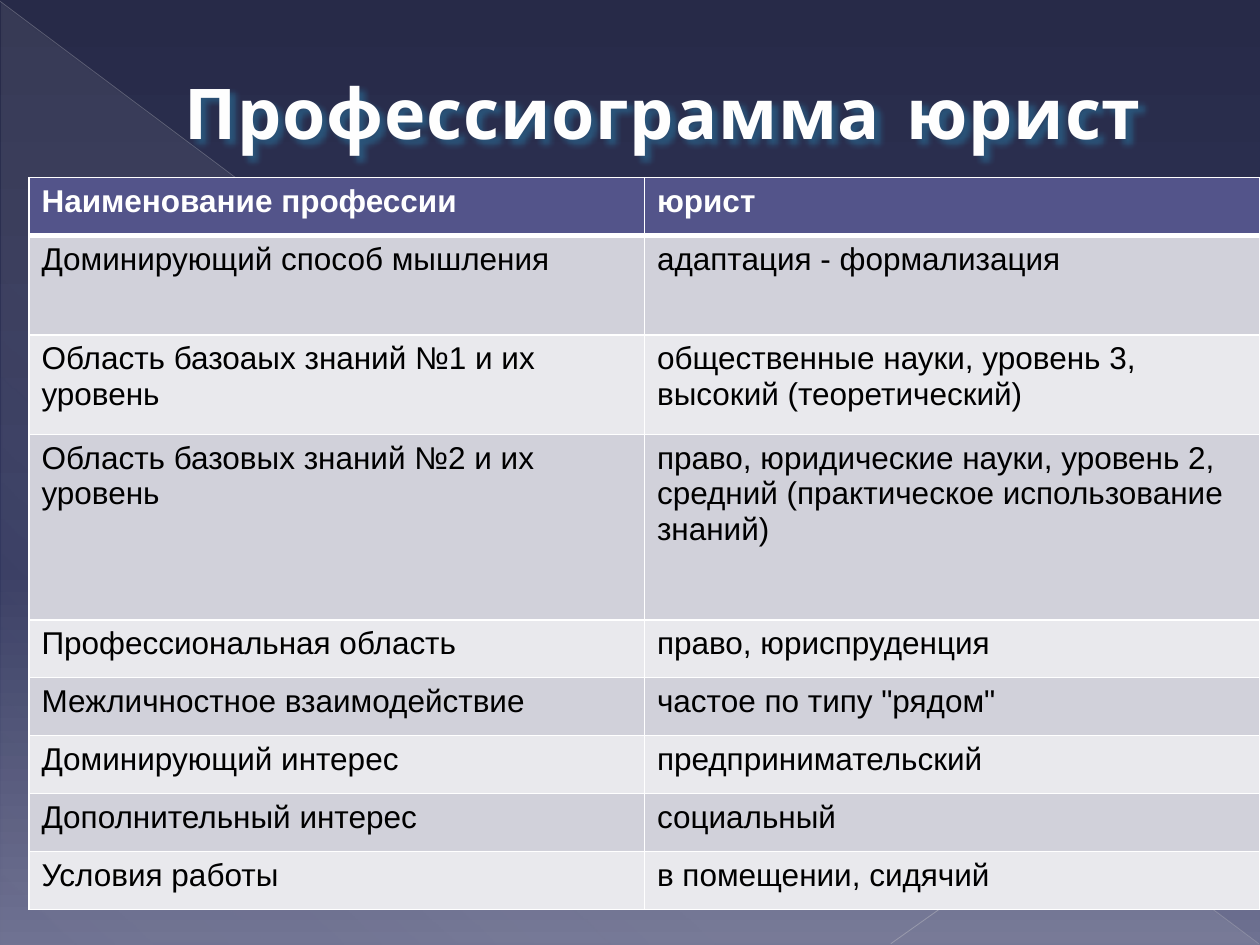
import pptx
import pptx.dml.color
import pptx.enum.shapes
import pptx.enum.text
import pptx.oxml
import pptx.oxml.ns
import pptx.util
from lxml import etree

Inches, Pt, qn = pptx.util.Inches, pptx.util.Pt, pptx.oxml.ns.qn

HEADER = ("Наименование профессии", "юрист")
TRAITS = [
    ("Доминирующий способ мышления", "адаптация - формализация"),
    ("Область базоаых знаний №1 и их уровень",
     "общественные науки, уровень 3, высокий (теоретический)"),
    ("Область базовых знаний №2 и их уровень",
     "право, юридические науки, уровень 2, средний (практическое использование знаний)"),
    ("Профессиональная область", "право, юриспруденция"),
    ("Межличностное взаимодействие", 'частое по типу "рядом"'),
    ("Доминирующий интерес", "предпринимательский"),
    ("Дополнительный интерес", "социальный"),
    ("Условия работы", "в помещении, сидячий"),
]
LOW_ROW = 0.46
TALL_ROWS = {1: 0.79, 2: 0.79, 3: 1.47}
BANDS = ("E9E9ED", "D1D1DA")
TITLE_FONT = {"name": "Comic Neue", "size": Pt(40), "bold": True}
HEADER_FONT = {"name": "Arial", "size": Pt(18), "bold": True}
TRAIT_FONT = {**HEADER_FONT, "bold": False}


def add_color(parent, color, alpha=100):
    """Append a colour with its opacity in percent to an XML parent."""
    tone = etree.SubElement(parent, qn("a:srgbClr"), val=color)
    if alpha < 100:
        etree.SubElement(tone, qn("a:alpha"), val=str(alpha * 1000))


def add_solid(parent, color, alpha=100):
    """Append a solid fill to an XML parent."""
    add_color(etree.SubElement(parent, qn("a:solidFill")), color, alpha)


def apply_format(target, values):
    """Set each attribute named in the format values."""
    for name, value in values.items():
        setattr(target, name, value)


def fill_gradient(fill, owner, stops, angle):
    """Give the owner's fill a linear gradient with a clockwise angle."""
    fill.gradient()
    fill.gradient_angle = 360 - angle
    stop_list = owner.find(".//" + qn("a:gsLst"))
    for stop in list(stop_list):
        stop_list.remove(stop)
    for position, color, alpha in stops:
        stop = etree.SubElement(stop_list, qn("a:gs"), pos=str(position * 1000))
        add_color(stop, color, alpha)


def write_run(frame, text, font, color):
    """Write one formatted run into a text frame and return it."""
    run = frame.paragraphs[0].add_run()
    run.text = text
    apply_format(run.font, font)
    run.font.color.rgb = pptx.dml.color.RGBColor.from_string(color)
    return run


def add_ray(slide, start, end, color, width, alpha):
    """Draw a thin translucent line."""
    ray = slide.shapes.add_connector(
        pptx.enum.shapes.MSO_CONNECTOR.STRAIGHT,
        *(Inches(value) for value in (*start, *end)))
    ray.line.width = Pt(width)
    add_solid(ray.line._get_or_add_ln(), color, alpha)
    etree.SubElement(ray._element.spPr, qn("a:effectLst"))


def add_backdrop(slide, width, height):
    """Paint the background, the pale wedge and the two rays."""
    fill_gradient(slide.background.fill, slide._element,
                  [(0, "272A48", 100), (60, "33385F", 100), (100, "6E7191", 100)], 90)
    wedge = slide.shapes.add_shape(
        pptx.enum.shapes.MSO_SHAPE.RIGHT_TRIANGLE,
        Inches(0.01), Inches(0.02), Inches(width - 0.01), Inches(height - 0.02))
    wedge.shadow.inherit = False
    wedge.line.fill.background()
    fill_gradient(wedge.fill, wedge._element,
                  [(0, "DEDEDE", 10), (70, "DEDEDE", 8), (100, "DEDEDE", 1)], 133)
    add_ray(slide, (0, 0.01), (width - 0.01, height - 0.01), "B7B7BE", 0.39, 35)
    add_ray(slide, (width, 5.41), (7.07, height - 0.01), "BFBFC5", 0.47, 45)


def add_title(slide, text, left, top, width, height):
    """Place the outlined title with its soft shadow."""
    title = slide.shapes.add_textbox(*map(Inches, (left, top, width, height)))
    frame = title.text_frame
    apply_format(frame, {"word_wrap": True,
                         "vertical_anchor": pptx.enum.text.MSO_ANCHOR.MIDDLE})
    frame.paragraphs[0].alignment = pptx.enum.text.PP_ALIGN.CENTER
    frame.paragraphs[0]._p.get_or_add_pPr().set("marL", str(Inches(0.53)))
    properties = write_run(frame, text, TITLE_FONT, "FEFEFE").font._element
    properties.set("spc", "50")
    outline = etree.Element(qn("a:ln"), w=str(Pt(1)))
    add_solid(outline, "4B86AC")
    properties.insert(0, outline)
    effects = etree.SubElement(title._element.spPr, qn("a:effectLst"))
    shadow = etree.SubElement(effects, qn("a:outerShdw"), blurRad=str(Pt(3)),
                              dist=str(Pt(3)), dir="2700000", algn="tl", rotWithShape="0")
    add_color(shadow, "2A5A80", 90)


def add_border(cell, side, width):
    """Draw one white edge of a cell."""
    edge = etree.SubElement(cell._tc.get_or_add_tcPr(), qn("a:ln" + side), w=str(Pt(width)))
    add_solid(edge, "FFFFFF")


def fill_cell(cell, text, row):
    """Write, border and fill one cell according to its row."""
    font, ink, paper = ((TRAIT_FONT, "000000", BANDS[row % 2]) if row
                        else (HEADER_FONT, "FFFFFF", "53548A"))
    write_run(cell.text_frame, text, font, ink)
    for side, thick_row in (("L", None), ("R", None), ("T", 1), ("B", 0)):
        add_border(cell, side, 3 if row == thick_row else 1)
    cell.fill.solid()
    cell.fill.fore_color.rgb = pptx.dml.color.RGBColor.from_string(paper)


def add_profile(slide, left, top, width):
    """Place the table of profession traits."""
    rows = [HEADER, *TRAITS]
    heights = [TALL_ROWS.get(row, LOW_ROW) for row in range(len(rows))]
    profile = slide.shapes.add_table(
        len(rows), len(HEADER),
        *map(Inches, (left, top, width, sum(heights)))).table
    profile.horz_banding = False
    for row, texts in enumerate(rows):
        profile.rows[row].height = Inches(heights[row])
        for column, text in enumerate(texts):
            fill_cell(profile.cell(row, column), text, row)


def main():
    """Build and save the slide."""
    deck = pptx.Presentation()
    apply_format(deck, {"slide_width": Inches(10), "slide_height": Inches(7.5)})
    slide = deck.slides.add_slide(deck.slide_layouts[6])
    add_backdrop(slide, 10, 7.5)
    add_title(slide, "Профессиограмма юрист", 0.5, 0.29, 9, 1.19)
    add_profile(slide, 0.23, 1.41, 9.77)
    deck.save("out.pptx")


if __name__ == "__main__":
    main()
